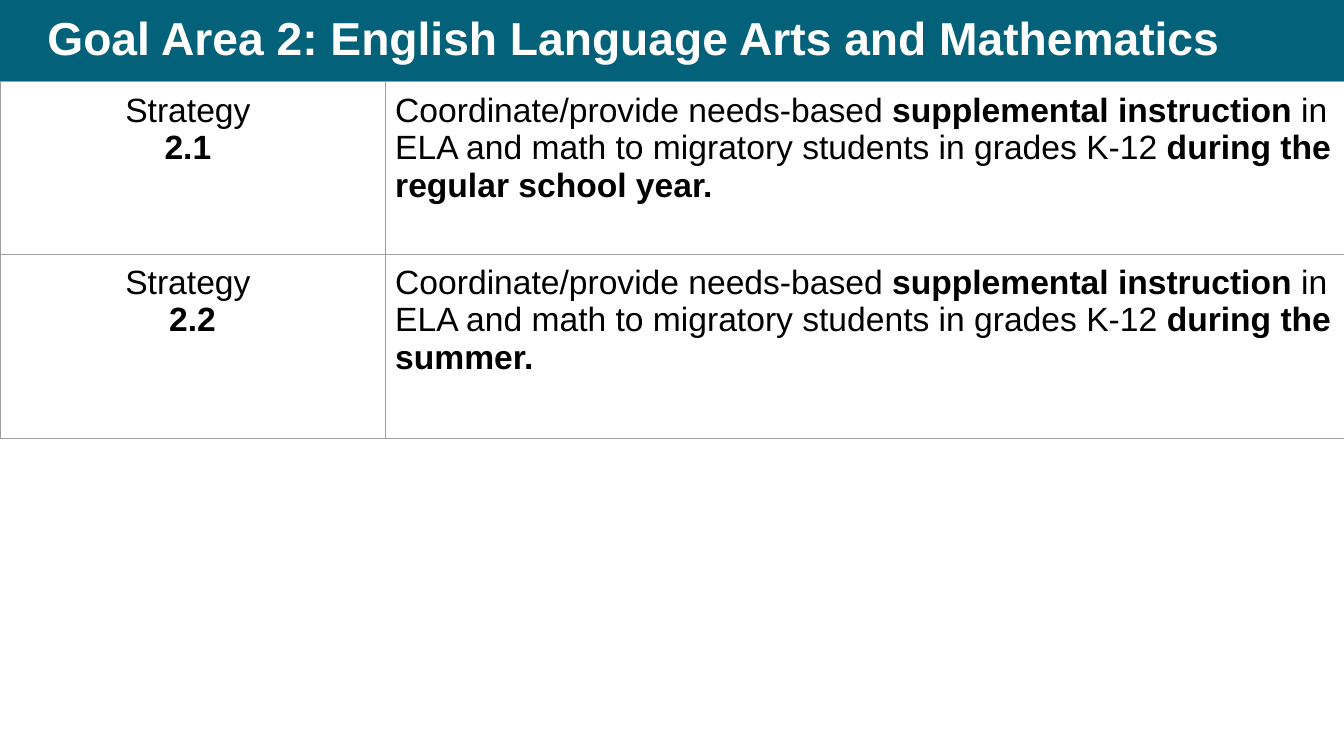
"""Build the Goal Area 2 strategy slide."""
import dataclasses

import lxml.etree
import pptx
import pptx.dml.color
import pptx.enum.shapes
import pptx.enum.text
import pptx.oxml.ns
import pptx.util

Inches = pptx.util.Inches
Pt = pptx.util.Pt
Align = pptx.enum.text.PP_ALIGN
Anchor = pptx.enum.text.MSO_ANCHOR

WIDE, BAR = 13.33, 0.81
COLS = (3.82, 9.51)
LEAD = "Coordinate/provide needs-based "
FOCUS = "supplemental instruction"


@dataclasses.dataclass
class Plan:
    code: str
    scope: str
    time: str
    height: float


PLANS = [
    Plan("2.1 ", " in ELA and math to migratory students in grades K-12",
         " during the regular school year.", 1.71),
    Plan("2.2", " in ELA and math to migratory students in grades K-12 ",
         "during the summer.", 1.83),
]


def color(code: str) -> pptx.dml.color.RGBColor:
    return pptx.dml.color.RGBColor.from_string(code)


def assign(item, values: dict) -> None:
    for name, value in values.items():
        setattr(item, name, value)


def write(para, text: str, size: float, tint: str, bold: bool) -> None:
    run = para.add_run()
    run.text = text
    assign(run.font, {"name": "Arial", "size": Pt(size), "bold": bold})
    run.font.color.rgb = color(tint)


def border(cell) -> None:
    props = cell._tc.get_or_add_tcPr()
    name = pptx.oxml.ns.qn
    for spot, side in enumerate(("a:lnL", "a:lnR", "a:lnT", "a:lnB")):
        line = lxml.etree.Element(name(side), w=str(Pt(0.75)))
        fill = lxml.etree.SubElement(line, name("a:solidFill"))
        lxml.etree.SubElement(fill, name("a:srgbClr"), val="9E9E9E")
        props.insert(spot, line)


def style(cell) -> None:
    edges = ("left", "right", "top", "bottom")
    assign(cell, {f"margin_{edge}": Inches(0.1) for edge in edges})
    cell.vertical_anchor = Anchor.TOP
    cell.fill.background()
    border(cell)


def add_bar(slide) -> None:
    bar = slide.shapes.add_shape(
        pptx.enum.shapes.MSO_SHAPE.RECTANGLE, 0, 0, Inches(WIDE), Inches(BAR))
    bar.shadow.inherit = False
    bar.fill.solid()
    bar.fill.fore_color.rgb = color("03617A")
    bar.line.fill.background()
    slide.shapes._spTree.insert(2, bar._element)


def add_title(slide, text: str) -> None:
    title = slide.shapes.title
    assign(title, {"left": Inches(0.37), "top": 0,
                   "width": Inches(12.32), "height": Inches(BAR)})
    frame = title.text_frame
    assign(frame, {"vertical_anchor": Anchor.MIDDLE, "word_wrap": True,
                   "auto_size": pptx.enum.text.MSO_AUTO_SIZE.NONE,
                   "margin_left": Inches(0.1), "margin_right": Inches(0.1),
                   "margin_top": Inches(0.05), "margin_bottom": Inches(0.05)})
    para = frame.paragraphs[0]
    assign(para, {"alignment": Align.LEFT, "line_spacing": 0.9})
    write(para, text, 33, "FFFFFF", True)


def add_plans(slide, plans: list[Plan]) -> None:
    height = sum(plan.height for plan in plans)
    table = slide.shapes.add_table(
        len(plans), len(COLS), 0, Inches(BAR), Inches(WIDE), Inches(height)).table
    assign(table, {"first_row": False, "horz_banding": False})
    for col, width in zip(table.columns, COLS):
        col.width = Inches(width)
    for row, plan in zip(table.rows, plans):
        row.height = Inches(plan.height)
        for cell in row.cells:
            style(cell)
        label, body = (cell.text_frame.paragraphs[0] for cell in row.cells)
        label.alignment = Align.CENTER
        write(label, "Strategy ", 24, "000000", False)
        label.add_line_break()
        write(label, plan.code, 24, "000000", True)
        for spot, text in enumerate((LEAD, FOCUS, plan.scope, plan.time)):
            write(body, text, 24, "000000", spot % 2 == 1)


def main() -> None:
    deck = pptx.Presentation()
    assign(deck, {"slide_width": Inches(WIDE), "slide_height": Inches(7.5)})
    slide = deck.slides.add_slide(deck.slide_layouts[5])
    add_bar(slide)
    add_plans(slide, PLANS)
    add_title(slide, "Goal Area 2: English Language Arts and Mathematics")
    deck.save("out.pptx")


if __name__ == "__main__":
    main()
